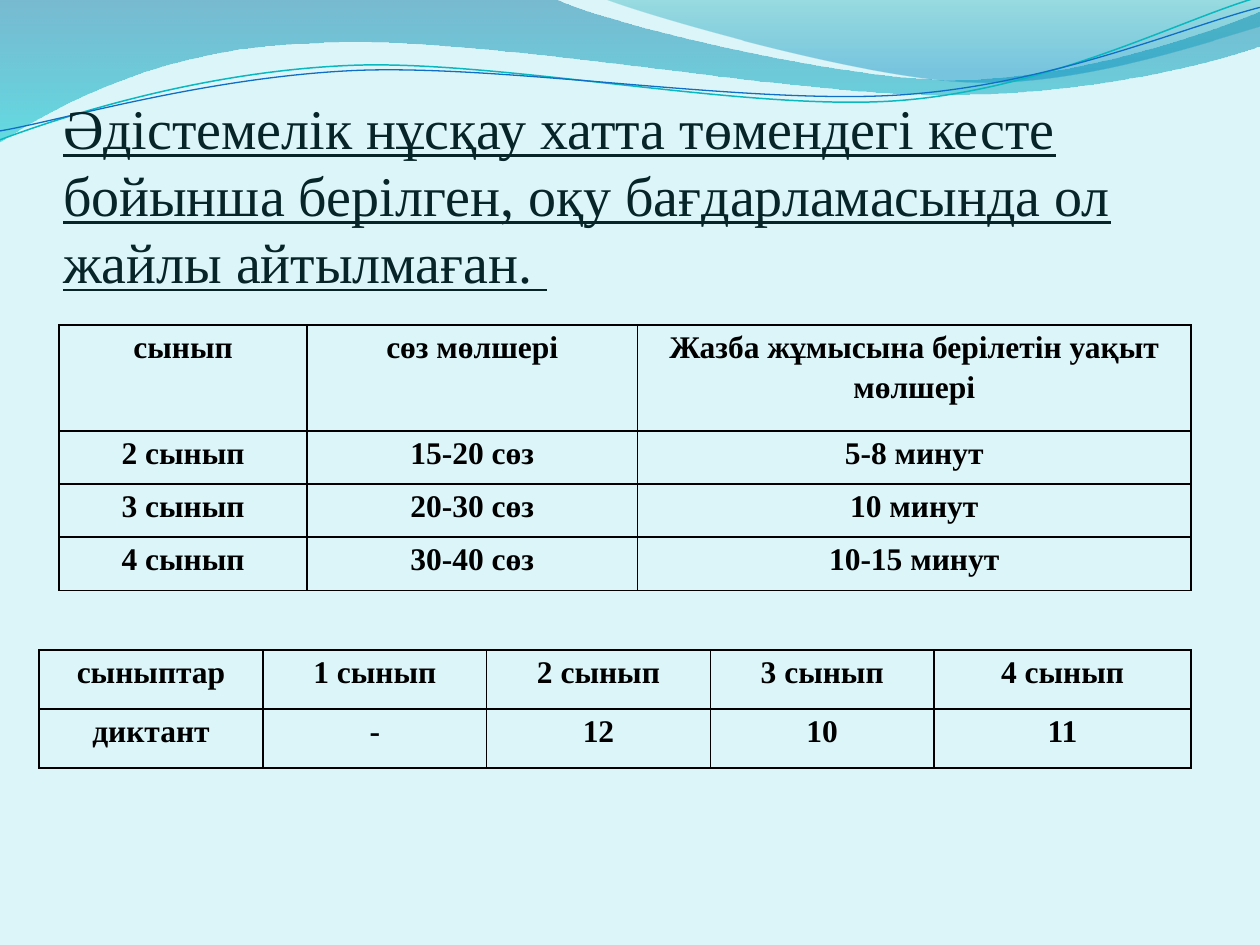
from lxml.etree import SubElement
from pptx import Presentation
from pptx.dml.color import RGBColor
from pptx.enum.text import MSO_ANCHOR as Anchor, MSO_AUTO_SIZE as AutoSize, PP_ALIGN as Align
from pptx.oxml.ns import qn
from pptx.util import Cm, Pt

FONT = "Times New Roman"
TITLE_FONT = {"name": FONT, "size": Pt(32), "bold": False, "underline": True}
CELL_FONT = {"name": FONT, "size": Pt(18), "bold": True}
CELL_FORMAT = {"margin_left": Cm(0.18), "margin_right": Cm(0.18), "margin_top": 0,
               "margin_bottom": 0, "vertical_anchor": Anchor.TOP}

BANDS = [
    ([(0, 0), (11.18, -0.03),
      ((12.09, 0.43), (16.87, 1.6), (19.25, 1.6)),
      ((21.67, 1.6), (24.33, 0.66), (25.4, 0.23)),
      (25.43, 0.91),
      ((24.97, 1.12), (22.1, 1.93), (18.95, 1.91)),
      ((15.8, 1.91), (9.7, 0.71), (6.53, 0.86)),
      ((3.28, 0.91), (1.17, 2.11), (-0.03, 2.87))],
     [(0, "0074A1", 45), (1, "00C6CF", 55)]),
    ([(12.17, -0.03),
      ((12.93, 0.28), (17.32, 1.57), (19.53, 1.65)),
      ((21.74, 1.75), (24.41, 0.81), (25.4, 0.53)),
      (25.4, 0)],
     [(0, "00A1A9", 30), (0.8, "008BBF", 45)]),
]
STRANDS = [
    ([(0, 2.82),
      ((1.22, 2.36), (4.01, 1.45), (7.04, 1.32)),
      ((10.03, 1.19), (15.06, 2.26), (18.11, 2.03)),
      ((21.16, 1.8), (23.83, 0.38), (25.35, -0.05))], "0AB8BF", 0.85),
    ([(0, 2.64),
      ((1.19, 2.44), (4.17, 1.55), (7.19, 1.42)),
      ((10.24, 1.3), (15.16, 2.13), (18.21, 1.91)),
      ((21.23, 1.7), (23.9, 0.53), (25.4, 0.15))], "0F6FC6", 0.75),
]
TITLE = ("Әдістемелік нұсқау хатта төмендегі кесте бойынша берілген, "
         "оқу бағдарламасында ол жайлы айтылмаған. ")
WORD_LIMITS = [
    ["сынып", "сөз мөлшері", "Жазба жұмысына берілетін уақыт мөлшері"],
    ["2 сынып", "15-20 сөз", "5-8 минут"],
    ["3 сынып", "20-30 сөз", "10 минут"],
    ["4 сынып", "30-40 сөз", "10-15 минут"],
]
DICTATIONS = [
    ["сыныптар", "1 сынып", "2 сынып", "3 сынып", "4 сынып"],
    ["диктант", "-", "12", "10", "11"],
]


def color(value):
    return RGBColor.from_string(value)


def apply_format(target, values):
    for name, value in values.items():
        setattr(target, name, value)


def is_curve(segment):
    return isinstance(segment[0], tuple)


def bend_segments(shape, segments):
    steps = iter(list(shape.element.iter(qn("a:lnTo"))))
    for segment in segments:
        step = next(steps)
        if is_curve(segment):
            curve = step.makeelement(qn("a:cubicBezTo"))
            step.addprevious(curve)
            for part in (step, next(steps), next(steps)):
                curve.append(part[0])
                part.getparent().remove(part)


def add_outline(page, outline, left, top, close):
    start, *segments = outline
    points = []
    for segment in segments:
        points.extend(segment if is_curve(segment) else [segment])
    builder = page.shapes.build_freeform(Cm(start[0]), Cm(start[1]))
    builder.add_line_segments([(Cm(x), Cm(y)) for x, y in points], close=close)
    shape = builder.convert_to_shape(Cm(left), Cm(top))
    bend_segments(shape, segments)
    shape.shadow.inherit = False
    return shape


def add_waves(page, left, top):
    for outline, stops in BANDS:
        band = add_outline(page, outline, left, top, close=True)
        band.line.fill.background()
        band.fill.gradient()
        band.fill.gradient_angle = 270
        for stop, (position, value, _) in zip(band.fill.gradient_stops, stops):
            stop.position = position
            stop.color.rgb = color(value)
        for tint, (_, _, opacity) in zip(band.element.spPr.iter(qn("a:srgbClr")), stops):
            SubElement(tint, qn("a:alpha"), val=str(opacity * 1000))
    for outline, value, width in STRANDS:
        strand = add_outline(page, outline, left, top, close=False)
        strand.fill.background()
        strand.line.color.rgb = color(value)
        strand.line.width = Pt(width)


def add_title(page, left, top, width, height):
    title = page.shapes.title
    title.element.getparent().append(title.element)
    apply_format(title, {"left": Cm(left), "top": Cm(top),
                         "width": Cm(width), "height": Cm(height)})
    frame = title.text_frame
    frame.text = TITLE
    apply_format(frame, {"margin_left": 0, "margin_right": 0, "margin_top": Cm(0.13),
                         "margin_bottom": 0, "word_wrap": True,
                         "auto_size": AutoSize.NONE, "vertical_anchor": Anchor.BOTTOM})
    para = frame.paragraphs[0]
    apply_format(para, {"alignment": Align.LEFT, "line_spacing": 1.0})
    span = para.runs[0]
    apply_format(span.font, TITLE_FONT)
    span.font.color.rgb = color("072428")


def add_borders(cell, value, width):
    properties = cell._tc.get_or_add_tcPr()
    for side in ("lnL", "lnR", "lnT", "lnB"):
        line = SubElement(properties, qn(f"a:{side}"), w=str(Pt(width)))
        fill = SubElement(line, qn("a:solidFill"))
        SubElement(fill, qn("a:srgbClr"), val=value)


def format_cell(cell, text):
    cell.text = text
    apply_format(cell, CELL_FORMAT)
    add_borders(cell, "000000", 1)
    cell.fill.background()
    para = cell.text_frame.paragraphs[0]
    apply_format(para, {"alignment": Align.CENTER, "line_spacing": 1.15})
    span = para.runs[0]
    apply_format(span.font, CELL_FONT)
    span.font.color.rgb = color("000000")


def add_grid(page, rows, left, top, widths, heights):
    table = page.shapes.add_table(len(rows), len(widths), Cm(left), Cm(top),
                                  Cm(sum(widths)), Cm(sum(heights))).table
    apply_format(table, {"first_row": False, "horz_banding": False})
    for column, width in zip(table.columns, widths):
        column.width = Cm(width)
    for row, height, texts in zip(table.rows, heights, rows):
        row.height = Cm(height)
        for cell, text in zip(row.cells, texts):
            format_cell(cell, text)


def main():
    deck = Presentation()
    deck.slide_width, deck.slide_height = Cm(25.4), Cm(19.05)
    page = deck.slides.add_slide(deck.slide_layouts[5])
    page.background.fill.solid()
    page.background.fill.fore_color.rgb = color("DBF5F9")
    add_waves(page, 0, 0)
    add_title(page, 1.27, 1.96, 23.06, 3.99)
    add_grid(page, WORD_LIMITS, 1.19, 6.55, [5, 6.66, 11.16], [2.14] + [1.07] * 3)
    add_grid(page, DICTATIONS, 0.79, 13.1, [4.51] * 4 + [5.18], [1.19] * 2)
    deck.save("out.pptx")


if __name__ == "__main__":
    main()
